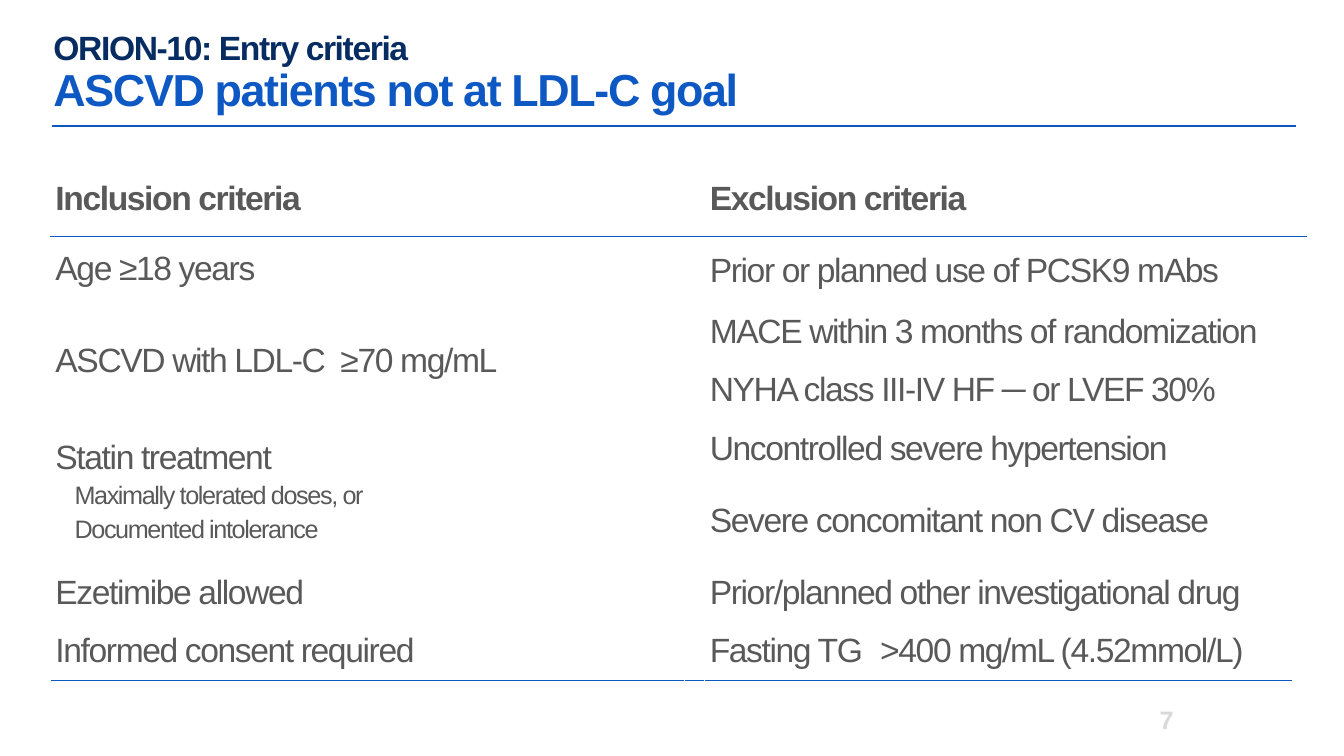
from lxml import etree
from pptx import Presentation
from pptx import util as u
from pptx.dml.color import RGBColor
from pptx.enum import shapes, text
from pptx.oxml import ns

COLORS = {"navy": "072C62", "blue": "0E58C4", "gray": "595959", "pale": "D9D9D9"}
COLUMN_WIDTHS = [6.29, 0.2, 5.97]
ROW_HEIGHTS = [0.58, 0.67, 0.58, 0.58, 0.58, 0.85, 0.58, 0.58]
INCLUSION = {
    0: ["Inclusion criteria"],
    1: ["Age ≥18 years"],
    2: ["ASCVD with LDL-C  ≥70 mg/mL"],
    4: ["Statin treatment", "Maximally tolerated doses, or", "Documented intolerance"],
    6: ["Ezetimibe allowed"],
    7: ["Informed consent required"],
}
EXCLUSION = [
    "Exclusion criteria",
    "Prior or planned use of PCSK9 mAbs",
    "MACE within 3 months of randomization",
    "NYHA class III-IV HF ─ or LVEF 30%",
    "Uncontrolled severe hypertension",
    "Severe concomitant non CV disease",
    "Prior/planned other investigational drug",
    "Fasting TG\t>400 mg/mL (4.52mmol/L)",
]


def add_span(para, wording, size=24, color="gray", bold=False, spacing=-100):
    span = para.add_run()
    span.text = wording
    span.font.name = "Arial"
    span.font.size = u.Pt(size)
    span.font.bold = bold
    span.font.color.rgb = RGBColor.from_string(COLORS[color])
    if spacing:
        span.font._element.set("spc", str(spacing))


def set_margins(frame, left=0, top=0, right=0, bottom=0):
    frame.margin_left, frame.margin_top = u.Inches(left), u.Inches(top)
    frame.margin_right, frame.margin_bottom = u.Inches(right), u.Inches(bottom)


def add_rule(page, left, right, top, width):
    rule = page.shapes.add_connector(
        shapes.MSO_CONNECTOR.STRAIGHT,
        u.Inches(left), u.Inches(top), u.Inches(right), u.Inches(top))
    rule.line.color.rgb = RGBColor.from_string(COLORS["blue"])
    rule.line.width = u.Pt(width)
    etree.SubElement(rule._element.spPr, ns.qn("a:effectLst"))


def fill_title(page):
    title = page.shapes.title
    title.left, title.top = u.Inches(0.53), u.Inches(0.28)
    title.width, title.height = u.Inches(11.26), u.Inches(0.97)
    frame = title.text_frame
    frame.word_wrap = True
    frame.auto_size = text.MSO_AUTO_SIZE.NONE
    frame.vertical_anchor = text.MSO_ANCHOR.BOTTOM
    set_margins(frame, bottom=0.1)
    para = frame.paragraphs[0]
    para.alignment = text.PP_ALIGN.LEFT
    para.line_spacing = 0.9
    add_span(para, "ORION-10: Entry criteria", color="navy", bold=True)
    para.add_line_break()
    add_span(para, "ASCVD patients not at LDL-C goal", size=32, color="blue", bold=True)


def add_page_number(page):
    box = page.shapes.add_textbox(u.Inches(11.39), u.Inches(6.77), u.Inches(0.25), u.Inches(0.74))
    frame = box.text_frame
    frame.word_wrap = False
    frame.vertical_anchor = text.MSO_ANCHOR.MIDDLE
    set_margins(frame)
    para = frame.paragraphs[0]
    para.alignment = text.PP_ALIGN.RIGHT
    add_span(para, "7", size=18, color="pale", bold=True, spacing=0)


def add_border(cell, side):
    border = etree.Element(ns.qn(f"a:{side}"), w=str(u.Pt(1)))
    fill = etree.SubElement(border, ns.qn("a:solidFill"))
    etree.SubElement(fill, ns.qn("a:srgbClr"), val=COLORS["blue"])
    cell._tc.get_or_add_tcPr().insert(0, border)


def add_tab_stop(para, position):
    stops = etree.SubElement(para._p.get_or_add_pPr(), ns.qn("a:tabLst"))
    etree.SubElement(stops, ns.qn("a:tab"), pos=str(u.Inches(position)), algn="l")


def indent(para, left, first):
    properties = para._p.get_or_add_pPr()
    properties.set("marL", str(u.Inches(left)))
    properties.set("indent", str(u.Inches(first)))


def fill_cell(cell, lines, header):
    if not header:
        cell.vertical_anchor = text.MSO_ANCHOR.MIDDLE
    frame = cell.text_frame
    for number, line in enumerate(lines):
        para = frame.add_paragraph() if number else frame.paragraphs[0]
        para.line_spacing = u.Pt(24)
        if number:
            indent(para, 2.56, -2.37)
        if "\t" in line:
            add_tab_stop(para, 1.69)
        add_span(para, line, size=18 if number else 24, bold=header)


def add_criteria_table(page):
    frame = page.shapes.add_table(
        len(ROW_HEIGHTS), len(COLUMN_WIDTHS),
        u.Inches(0.5), u.Inches(1.77), u.Inches(12.46), u.Inches(4.98))
    table = frame.table
    table.first_row = table.horz_banding = False
    for column, width in zip(table.columns, COLUMN_WIDTHS):
        column.width = u.Inches(width)
    for row, height in zip(table.rows, ROW_HEIGHTS):
        row.height = u.Inches(height)
    for cell in table.iter_cells():
        cell.fill.background()
        set_margins(cell, 0.05, 0.05, 0.05, 0.05)
    for column in range(len(COLUMN_WIDTHS)):
        add_border(table.cell(0, column), "lnB")
        add_border(table.cell(1, column), "lnT")
    for top in (2, 4):
        table.cell(top, 0).merge(table.cell(top + 1, 0))
    for row, lines in INCLUSION.items():
        fill_cell(table.cell(row, 0), lines, header=row == 0)
    for row, line in enumerate(EXCLUSION):
        fill_cell(table.cell(row, 2), [line], header=row == 0)
    table.cell(1, 2).text_frame.paragraphs[0].line_spacing = None


def main():
    deck = Presentation()
    deck.slide_width, deck.slide_height = u.Inches(13.33), u.Inches(7.5)
    page = deck.slides.add_slide(deck.slide_layouts[5])
    add_rule(page, 0.52, 12.85, 1.25, 0.75)
    add_rule(page, 0.5, 12.81, 6.75, 0.25)
    add_page_number(page)
    add_criteria_table(page)
    fill_title(page)
    deck.save("out.pptx")


if __name__ == "__main__":
    main()
